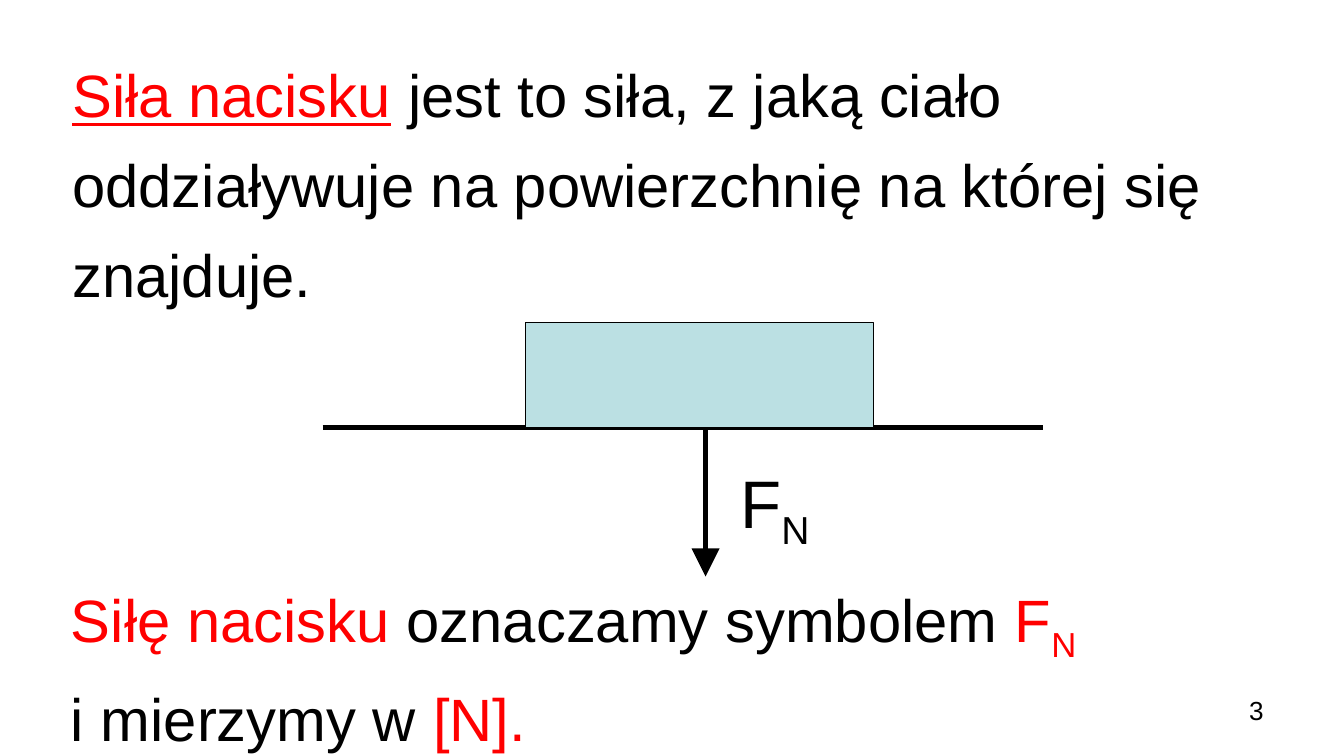
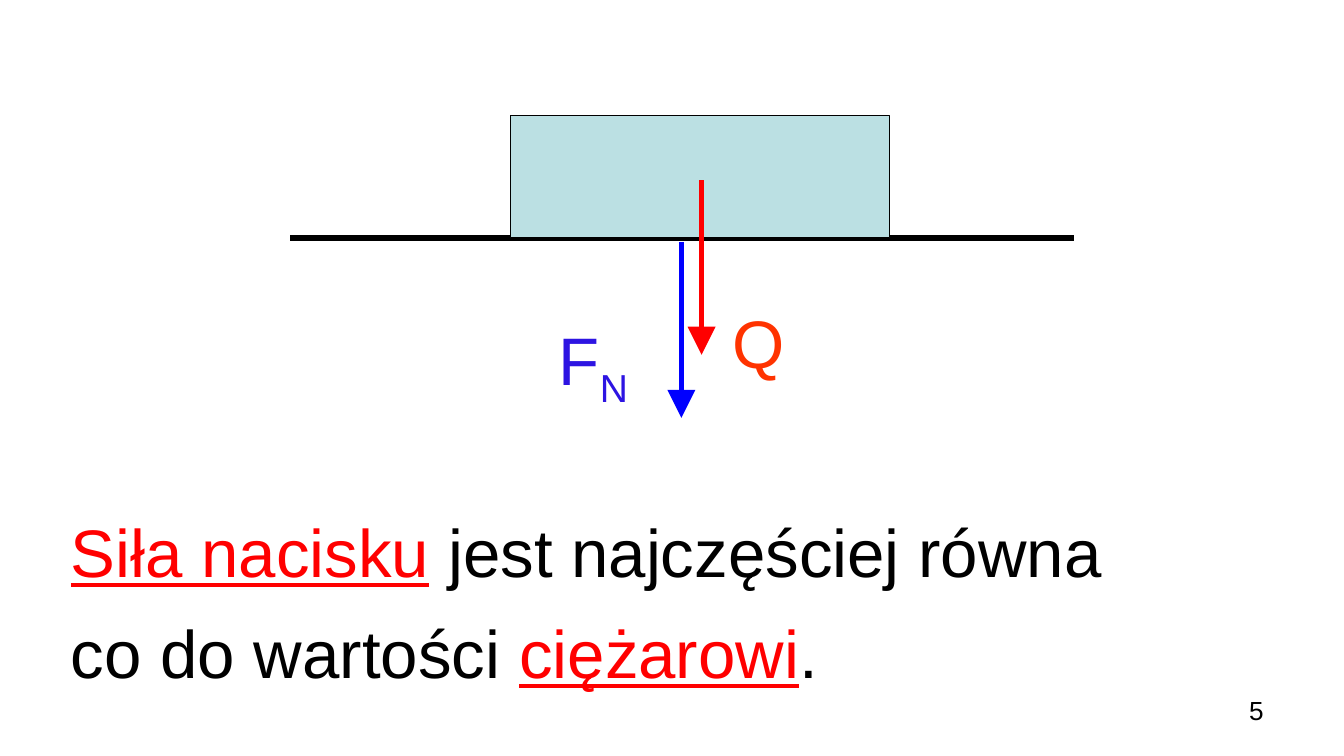
from lxml.etree import SubElement
from pptx import Presentation
from pptx.dml.color import RGBColor
from pptx.enum.shapes import MSO_CONNECTOR, MSO_SHAPE
from pptx.enum.text import MSO_ANCHOR, MSO_AUTO_SIZE, PP_ALIGN
from pptx.oxml.ns import qn
from pptx.util import Inches, Pt

FONT = "Arial"
BLACK, RED, BLUE = "000000", "FF0000", "0000FF"
VIOLET, ORANGE, AQUA = "2D14E2", "FF3300", "BBE0E3"
color = RGBColor.from_string


def write(slide, box, paras, size, anchor=MSO_ANCHOR.TOP, space=None,
          align=None, grow=True):
    """Each run is (text, colour, style): u underlines, s lowers, b breaks after."""
    frame = slide.shapes.add_textbox(*map(Inches, box)).text_frame
    frame.word_wrap = True
    frame.vertical_anchor = anchor
    if grow:
        frame.auto_size = MSO_AUTO_SIZE.SHAPE_TO_FIT_TEXT
    for i, runs in enumerate(paras):
        para = frame.add_paragraph() if i else frame.paragraphs[0]
        para.line_spacing = space
        para.alignment = align
        for text, hue, style in runs:
            run = para.add_run()
            run.text = text
            font = run.font
            font.name, font.size = FONT, Pt(size)
            font.color.rgb = color(hue)
            if "u" in style:
                font.underline = True
            if "s" in style:
                font._element.set("baseline", "-25000")
            if "b" in style:
                para.add_line_break()


def draw(slide, start, end, hue, arrow=False):
    line = slide.shapes.add_connector(
        MSO_CONNECTOR.STRAIGHT, *map(Inches, start + end))
    line.line.color.rgb = color(hue)
    line.line.width = Pt(3)
    props = line._element.spPr
    if arrow:
        SubElement(props.find(qn("a:ln")), qn("a:tailEnd"),
                   type="triangle", w="lg", len="lg")
    SubElement(props, qn("a:effectLst"))


# What each slide holds
middle = MSO_ANCHOR.MIDDLE
pages = [
    dict(
        number="3",
        texts=[
            ((0.44, 0.24, 9.06, 2.12), 32, middle, [[
                ("Siła nacisku", RED, "u"),
                (" jest to siła, z jaką ciało oddziaływuje na powierzchnię "
                 "na której się znajduje.", BLACK, "")]]),
            ((0.43, 4.17, 9.06, 1.45), 32, middle, [[
                ("Siłę nacisku ", RED, ""),
                ("oznaczamy symbolem ", BLACK, ""),
                ("F", RED, ""), ("N ", RED, "sb"),
                ("i mierzymy w", BLACK, ""), (" [N].", RED, "")]]),
        ],
        ground=(2.4, 7.76, 3.18),
        block=(3.91, 2.4, 2.59, 0.78),
        arrows=[(5.25, 3.18, 4.29, BLACK)],
        labels=[((5.41, 3.38, 0.92, 0.71),
                 [("F", BLACK, ""), ("N", BLACK, "s")])],
    ),
    dict(
        number="5",
        texts=[
            ((0.43, 3.6, 9.37, 1.62), 36, MSO_ANCHOR.TOP, [
                [("Siła nacisku", RED, "u"),
                 (" jest najczęściej równa", BLACK, "")],
                [("co do wartości ", BLACK, ""), ("ciężarowi", RED, "u"),
                 (".", BLACK, "")]]),
        ],
        ground=(2.16, 7.99, 1.77),
        block=(3.8, 0.86, 2.82, 0.91),
        arrows=[(5.22, 1.34, 2.64, RED), (5.07, 1.8, 3.11, BLUE)],
        labels=[((4.06, 2.32, 1, 0.71),
                 [("F", VIOLET, ""), ("N", VIOLET, "s")]),
                ((5.35, 2.19, 1, 0.71), [("Q", ORANGE, "")])],
    ),
]

# A 16:9 deck
deck = Presentation()
deck.slide_width = Inches(10)
deck.slide_height = Inches(10 * 9 / 16)

for page in pages:
    slide = deck.slides.add_slide(deck.slide_layouts[6])

    # Sentences
    for box, size, anchor, paras in page["texts"]:
        write(slide, box, paras, size, anchor, space=1.25)

    # Block on the ground
    left, right, level = page["ground"]
    draw(slide, (left, level), (right, level), BLACK)
    block = slide.shapes.add_shape(
        MSO_SHAPE.RECTANGLE, *map(Inches, page["block"]))
    block.shadow.inherit = False
    block.fill.solid()
    block.fill.fore_color.rgb = color(AQUA)
    block.line.color.rgb = color(BLACK)
    block.line.width = Pt(0.75)

    # Forces and their symbols
    for x, top, tip, hue in page["arrows"]:
        draw(slide, (x, top), (x, tip), hue, arrow=True)
    for box, runs in page["labels"]:
        write(slide, box, [runs], 36)

    # Page number
    write(slide, (7.17, 5.12, 2.33, 0.39), [[(page["number"], BLACK, "")]], 14,
          align=PP_ALIGN.RIGHT, grow=False)

deck.save("out.pptx")
